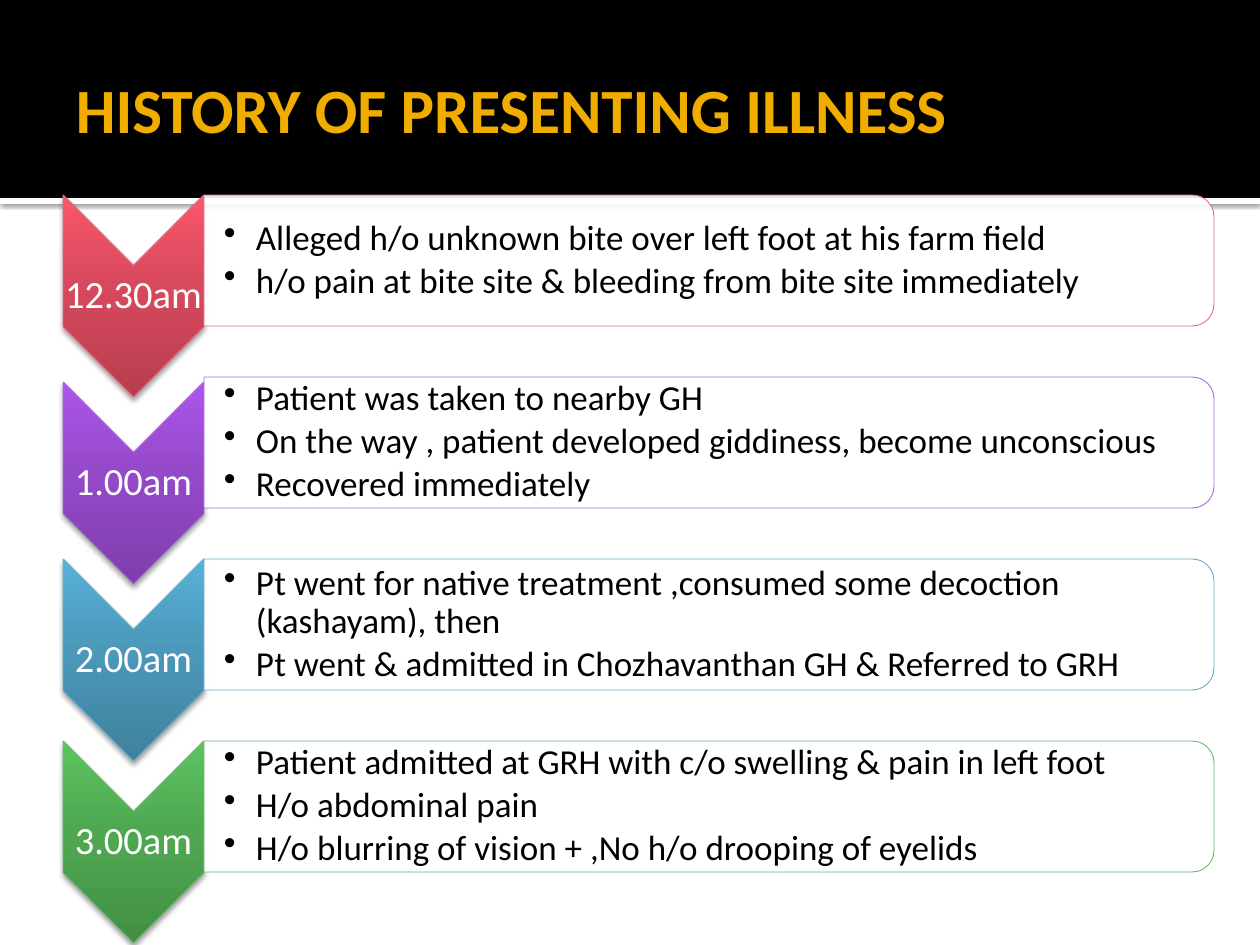
from lxml.etree import SubElement
from pptx import Presentation
from pptx.dml.color import RGBColor
from pptx.enum.shapes import MSO_SHAPE as Preset
from pptx.enum.text import MSO_ANCHOR as Anchor, PP_ALIGN as Align
from pptx.oxml import parse_xml
from pptx.oxml.ns import nsdecls, qn
from pptx.util import Emu, Pt

TITLE = "HISTORY OF PRESENTING ILLNESS"
EVENTS = [
    ("12.30am", "red", [
        "Alleged h/o unknown bite over left foot at his farm field",
        "h/o pain at bite site & bleeding from bite site immediately"]),
    ("1.00am", "purple", [
        "Patient was taken to nearby GH",
        "On the way , patient developed giddiness, become unconscious",
        "Recovered immediately"]),
    ("2.00am", "blue", [
        "Pt went for native treatment ,consumed some decoction (kashayam), then",
        "Pt went & admitted in Chozhavanthan GH & Referred to GRH"]),
    ("3.00am", "green", [
        "Patient admitted at GRH with c/o swelling & pain in left foot",
        "H/o abdominal pain",
        "H/o blurring of vision + ,No h/o drooping of eyelids"]),
]
COLORS = {"white": "FFFFFF", "black": "000000", "gold": "F0AD00",
          "red": "E66C7D", "purple": "AA6AD8", "blue": "69ACC9", "green": "6BB76D"}
GRADIENTS = {"red": ("B73E4F", "D7495D", "FA556C"),
             "purple": ("7E3EAB", "9449C9", "AC55EB"),
             "blue": ("40819E", "4B98BA", "57B1D8"),
             "green": ("438F45", "4FA851", "5CC35F")}
STOPS = (0, 55, 100)
FONT = "Calibri"

SLIDE_W, SLIDE_H = 1260, 945
HEADER_H, RULE_H = 198, 6
LEFT, FIRST_TOP, PITCH = 63, 195, 182
CHEVRON_W, CHEVRON_H = 141, 202
CHEVRON_SHIFTS = (0, 5, 0, 0)
LABEL_H = 60
BAR_W, BAR_H = 1010, 131
BODY_W, BODY_H = 1004, 119
INDENT = 32


def px(value):
    return Emu(round(value * 914400 / 126))


def add_box(slide, preset, left, top, width, height, quarter_turn=False):
    if quarter_turn:
        left, top = left + (width - height) / 2, top + (height - width) / 2
        width, height = height, width
    shape = slide.shapes.add_shape(preset, px(left), px(top), px(width), px(height))
    shape.rotation = 90 if quarter_turn else 0
    shape.shadow.inherit = False
    shape.line.fill.background()
    return shape


def fill_solid(shape, color, opacity=100):
    shape.fill.solid()
    shape.fill.fore_color.rgb = RGBColor.from_string(COLORS[color])
    if opacity < 100:
        rgb = shape.fill._xPr.find(qn("a:solidFill"))[0]
        SubElement(rgb, qn("a:alpha"), val=str(opacity * 1000))


def fill_gradient(shape, colors):
    stops = "".join(
        f'<a:gs pos="{stop * 1000}"><a:srgbClr val="{color}"/></a:gs>'
        for stop, color in zip(STOPS, colors))
    gradient = parse_xml(
        f'<a:gradFill {nsdecls("a")} rotWithShape="0"><a:gsLst>{stops}</a:gsLst>'
        '<a:lin ang="16200000" scaled="0"/></a:gradFill>')
    shape._element.spPr.find(qn("a:prstGeom")).addnext(gradient)


def set_outline(shape, color):
    shape.line.color.rgb = RGBColor.from_string(COLORS[color])
    shape.line.width = Pt(0.5)


def add_shadow(shape, opacity, blur, distance):
    effects = shape._element.spPr.find(qn("a:effectLst"))
    shadow = SubElement(effects, qn("a:outerShdw"), blurRad=str(Pt(blur)),
                        dist=str(Pt(distance)), dir="5400000", rotWithShape="0")
    color = SubElement(shadow, qn("a:srgbClr"), val=COLORS["black"])
    SubElement(color, qn("a:alpha"), val=str(opacity * 1000))


def add_text(slide, lines, left, top, width, height, size, color, insets,
             bold=False, align=Align.LEFT, spacing=1.0, after=0, bullets=False):
    frame = slide.shapes.add_textbox(px(left), px(top), px(width), px(height)).text_frame
    frame.word_wrap = True
    frame.vertical_anchor = Anchor.MIDDLE
    frame.margin_left, frame.margin_top, frame.margin_right, frame.margin_bottom = map(px, insets)
    for index, line in enumerate(lines):
        paragraph = frame.paragraphs[0] if index == 0 else frame.add_paragraph()
        paragraph.alignment = align
        paragraph.line_spacing = spacing
        paragraph.space_after = Pt(after)
        run = paragraph.add_run()
        run.text = line
        run.font.name, run.font.size, run.font.bold = FONT, Pt(size), bold
        run.font.color.rgb = RGBColor.from_string(COLORS[color])
        if bullets:
            properties = paragraph._p.get_or_add_pPr()
            properties.set("marL", str(px(INDENT)))
            properties.set("indent", str(-px(INDENT)))
            SubElement(properties, qn("a:buChar"), char="•")


def add_event(slide, index, label, color, details):
    bar_top = FIRST_TOP + index * PITCH
    chevron_top = bar_top + CHEVRON_SHIFTS[index]
    bar_left = LEFT + CHEVRON_W

    chevron = add_box(slide, Preset.CHEVRON, LEFT, chevron_top, CHEVRON_W, CHEVRON_H, True)
    fill_gradient(chevron, GRADIENTS[color])
    set_outline(chevron, color)
    add_shadow(chevron, 38, 3.1, 2)
    add_text(slide, [label], LEFT, chevron_top + (CHEVRON_H - LABEL_H) / 2, CHEVRON_W, LABEL_H,
             22, "white", (2, 2, 2, 2), align=Align.CENTER, spacing=0.9)

    bar = add_box(slide, Preset.ROUND_2_SAME_RECTANGLE, bar_left, bar_top, BAR_W, BAR_H, True)
    fill_solid(bar, "white", 90)
    set_outline(bar, color)
    add_text(slide, details, bar_left, bar_top + (BAR_H - BODY_H) / 2, BODY_W, BODY_H,
             20, "black", (20, 1, 1, 1), spacing=0.9, after=3, bullets=True)


def main():
    presentation = Presentation()
    presentation.slide_width, presentation.slide_height = px(SLIDE_W), px(SLIDE_H)
    slide = presentation.slides.add_slide(presentation.slide_layouts[6])

    rule = add_box(slide, Preset.RECTANGLE, 0, HEADER_H, SLIDE_W, RULE_H)
    fill_solid(rule, "white")
    add_shadow(rule, 60, 2.5, 0.8)
    header = add_box(slide, Preset.RECTANGLE, 0, 0, SLIDE_W, HEADER_H)
    fill_solid(header, "black")
    add_text(slide, [TITLE], LEFT, 22, 1134, 172, 36, "gold", (13, 6, 6, 6), bold=True)

    for index, event in enumerate(EVENTS):
        add_event(slide, index, *event)
    presentation.save("out.pptx")


if __name__ == "__main__":
    main()
